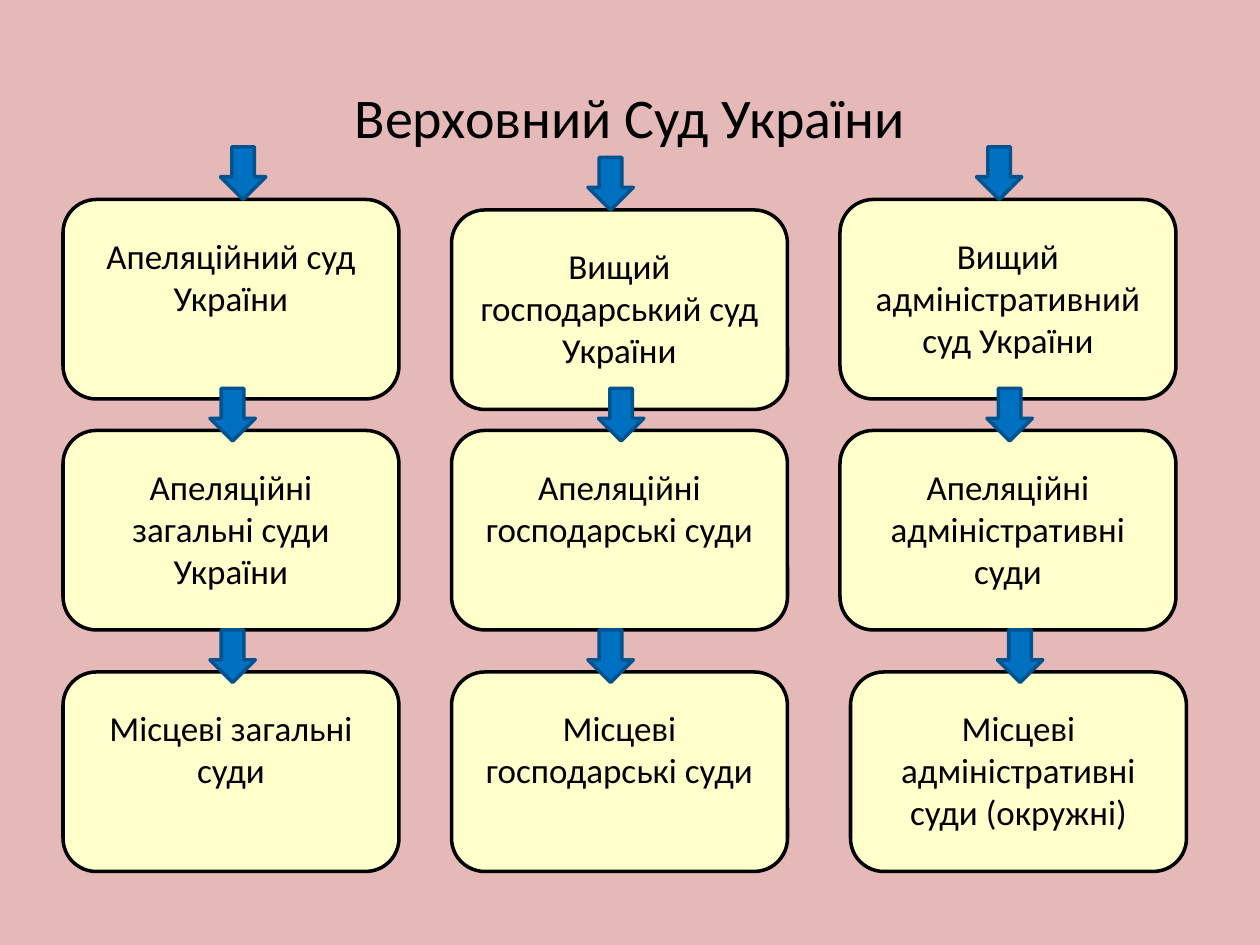
from pptx import Presentation
from pptx.dml.color import RGBColor
from pptx.enum.shapes import MSO_SHAPE as Shape
from pptx.enum.text import MSO_ANCHOR as Anchor, PP_ALIGN as Align
from pptx.util import Inches, Pt

PINK = RGBColor(0xE5, 0xB9, 0xB7)
CREAM = RGBColor(0xFF, 0xFF, 0xCC)
BLACK = RGBColor(0x00, 0x00, 0x00)
BLUE = RGBColor(0x00, 0x70, 0xC0)
DARK_BLUE = RGBColor(0x00, 0x53, 0x8E)

# The grid has 120 columns and 90 rows
COLUMNS, ROWS = 120, 90
BOX_WIDTH, BOX_HEIGHT = 32, 19
ARROW_WIDTH, ARROW_HEIGHT = 4.32, 5
FIRST_COLUMN, COLUMN_STEP = 6, 37

# Each level: box row, arrow row, then (text, arrow column, right shift, down shift)
LEVELS = [
    (19, 14, [("Апеляційний суд України", 21, 0, 0),
              ("Вищий господарський суд України", 56, 0, 1),
              ("Вищий адміністративний суд України", 93, 0, 0)]),
    (41, 37, [("Апеляційні загальні суди України", 20, 0, 0),
              ("Апеляційні господарські суди", 57, 0, 0),
              ("Апеляційні адміністративні суди", 94, 0, 0)]),
    (64, 60, [("Місцеві загальні суди", 20, 0, 0),
              ("Місцеві господарські суди", 56, 0, 0),
              ("Місцеві адміністративні суди (окружні)", 95, 1, 0)]),
]


class CourtSlide:
    font_name = "Calibri"
    title_size = Pt(32)
    box_size = Pt(20)
    line_width = Pt(2)

    def __init__(self, presentation):
        self.cell_width = presentation.slide_width / COLUMNS
        self.cell_height = presentation.slide_height / ROWS
        self.slide = presentation.slides.add_slide(presentation.slide_layouts[5])
        background = self.slide.background.fill
        background.solid()
        background.fore_color.rgb = PINK

    def area(self, column, row, width, height):
        return (round(column * self.cell_width), round(row * self.cell_height),
                round(width * self.cell_width), round(height * self.cell_height))

    def add_text(self, shape, text, size, anchor):
        frame = shape.text_frame
        frame.word_wrap = True
        frame.vertical_anchor = anchor
        paragraph = frame.paragraphs[0]
        paragraph.alignment = Align.CENTER
        run = paragraph.add_run()
        run.text = text
        run.font.name = self.font_name
        run.font.size = size
        run.font.color.rgb = BLACK

    def title(self, text, *place):
        title = self.slide.shapes.title
        title.left, title.top, title.width, title.height = self.area(*place)
        self.add_text(title, text, self.title_size, Anchor.MIDDLE)

    def shape(self, kind, fill, line, *place):
        shape = self.slide.shapes.add_shape(kind, *self.area(*place))
        shape.shadow.inherit = False
        shape.fill.solid()
        shape.fill.fore_color.rgb = fill
        shape.line.color.rgb = line
        shape.line.width = self.line_width
        return shape

    def box(self, text, column, row):
        box = self.shape(Shape.FLOWCHART_ALTERNATE_PROCESS, CREAM, BLACK,
                         column, row, BOX_WIDTH, BOX_HEIGHT)
        frame = box.text_frame
        frame.margin_left = frame.margin_right = Inches(0.1)
        frame.margin_top = frame.margin_bottom = Inches(0.2)
        self.add_text(box, text, self.box_size, Anchor.TOP)

    def arrow(self, column, row):
        self.shape(Shape.DOWN_ARROW, BLUE, DARK_BLUE,
                   column, row, ARROW_WIDTH, ARROW_HEIGHT)


def main():
    presentation = Presentation()
    presentation.slide_width = Inches(10)
    presentation.slide_height = Inches(7.5)
    courts = CourtSlide(presentation)
    courts.title("Верховний Суд України", 6, 3.6, 108, 15)

    # Court boxes, one branch per column
    for box_row, _, branches in LEVELS:
        for index, (text, _, right, down) in enumerate(branches):
            column = FIRST_COLUMN + index * COLUMN_STEP + right
            courts.box(text, column, box_row + down)

    # Arrows lie over the boxes
    for _, arrow_row, branches in LEVELS:
        for _, arrow_column, _, down in branches:
            courts.arrow(arrow_column, arrow_row + down)

    presentation.save("out.pptx")


if __name__ == "__main__":
    main()
